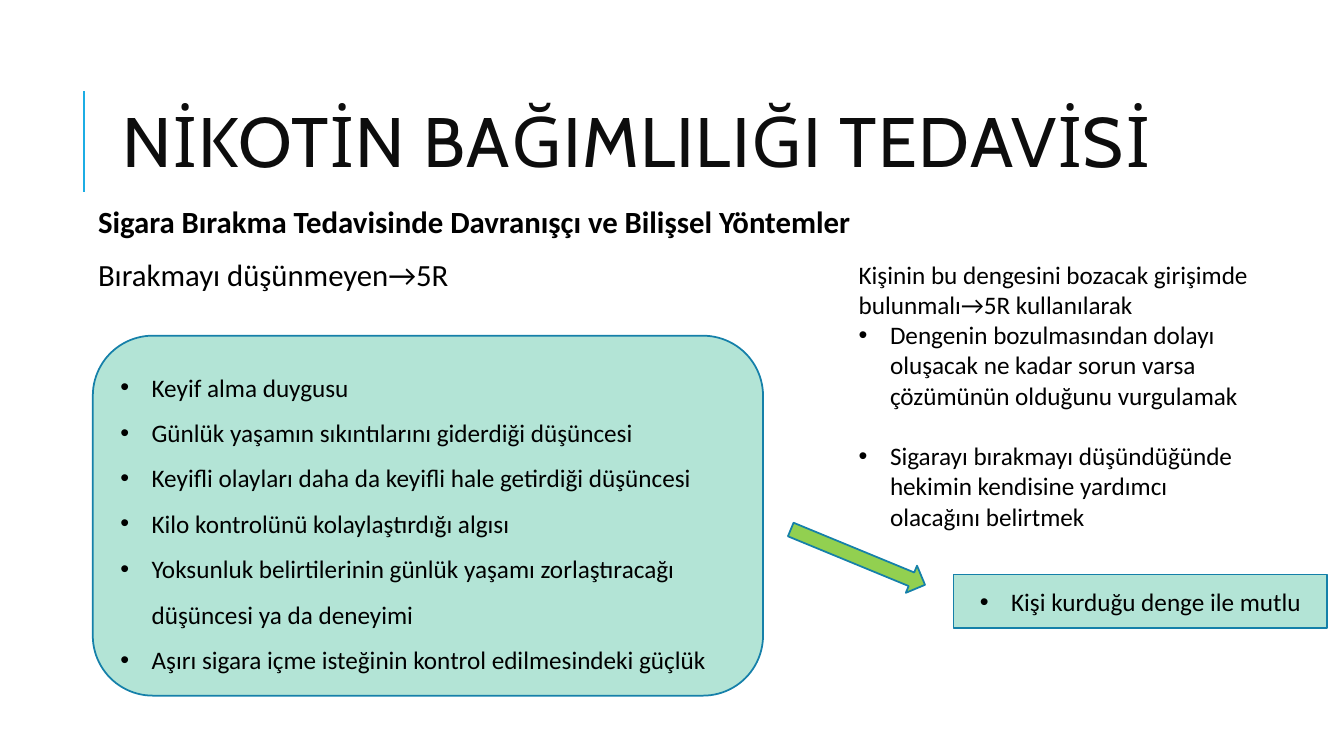
from lxml import etree
from pptx import Presentation
from pptx import util as u
from pptx.dml.color import RGBColor
from pptx.enum import shapes, text
from pptx.oxml.ns import qn

TITLE = "NİKOTİN BAĞIMLILIĞI TEDAVİSİ"
INTRO = [
    "Sigara Bırakma Tedavisinde Davranışçı ve Bilişsel Yöntemler",
    "Bırakmayı düşünmeyen→5R",
]
BELIEFS = [
    "Keyif alma duygusu",
    "Günlük yaşamın sıkıntılarını giderdiği düşüncesi",
    "Keyifli olayları daha da keyifli hale getirdiği düşüncesi",
    "Kilo kontrolünü kolaylaştırdığı algısı",
    "Yoksunluk belirtilerinin günlük yaşamı zorlaştıracağı düşüncesi ya da deneyimi",
    "Aşırı sigara içme isteğinin kontrol edilmesindeki güçlük",
]
BALANCE = ["Kişi kurduğu denge ile mutlu"]
ADVICE_LEAD = "Kişinin bu dengesini bozacak girişimde bulunmalı→5R kullanılarak"
ADVICE = [
    "Dengenin bozulmasından dolayı oluşacak ne kadar sorun varsa çözümünün olduğunu vurgulamak",
    "Sigarayı bırakmayı düşündüğünde hekimin kendisine yardımcı olacağını belirtmek",
]
MINT, GREEN, OUTLINE, ACCENT = "B3E4D6", "92D050", "1580A9", "1CADE4"
INK, TITLE_INK = "000000", "0D0D0D"
HANG = u.Cm(0.79)


def color(value):
    return RGBColor.from_string(value)


def place(item, left, top, width, height):
    item.left, item.top = u.Cm(left), u.Cm(top)
    item.width, item.height = u.Cm(width), u.Cm(height)


def set_font(para, size, name="Calibri", ink=INK, bold=False):
    para.font.size, para.font.name, para.font.bold = u.Pt(size), name, bold
    para.font.color.rgb = color(ink)


def set_bullet(para, char=None):
    """Hang the paragraph behind a bullet, or remove bullet and indent."""
    props = para._p.get_or_add_pPr()
    props.set("marL", str(HANG if char else 0))
    props.set("indent", str(-HANG if char else 0))
    if char:
        etree.SubElement(props, qn("a:buFont")).set("typeface", "Arial")
        etree.SubElement(props, qn("a:buChar")).set("char", char)
    else:
        etree.SubElement(props, qn("a:buNone"))


def write(frame, lines, bulleted=True):
    """Fill the frame with one paragraph per line and return the paragraphs."""
    frame.word_wrap = True
    frame.text = "\n".join(lines)
    for para in frame.paragraphs:
        para.alignment = text.PP_ALIGN.LEFT
        set_bullet(para, "•" if bulleted else None)
        set_font(para, 18)
    return frame.paragraphs


def add_panel(page, kind, fill, *bounds):
    panel = page.shapes.add_shape(kind, *map(u.Cm, bounds))
    panel.shadow.inherit = False
    panel.fill.solid()
    panel.fill.fore_color.rgb = color(fill)
    panel.line.color.rgb = color(OUTLINE)
    panel.line.width = u.Pt(1.25)
    panel.text_frame.vertical_anchor = text.MSO_ANCHOR.MIDDLE
    return panel


def main():
    deck = Presentation()
    deck.slide_width, deck.slide_height = u.Cm(33.87), u.Cm(19.05)
    page = deck.slides.add_slide(deck.slide_layouts[1])
    title, body = page.placeholders

    rule = page.shapes.add_connector(
        shapes.MSO_CONNECTOR.STRAIGHT, *map(u.Cm, (2.12, 4.83, 2.12, 2.29)))
    rule.line.color.rgb = color(ACCENT)
    rule.line.width = u.Pt(1.5)
    etree.SubElement(rule._element.spPr, qn("a:effectLst"))

    place(title, 2.84, 1.63, 27, 4.17)
    title.text_frame.text = TITLE
    title.text_frame.vertical_anchor = text.MSO_ANCHOR.MIDDLE
    heading = title.text_frame.paragraphs[0]
    heading.alignment = text.PP_ALIGN.LEFT
    heading.line_spacing = 0.8
    set_font(heading, 50, "Cabin", TITLE_INK)
    heading.runs[0].font._element.set("spc", "100")

    place(body, 2.34, 5.08, 31.34, 18.08 - 5.08)
    frame = body.text_frame
    frame.margin_left = frame.margin_right = u.Cm(0.13)
    frame.margin_top = frame.margin_bottom = u.Cm(0.13)
    intro = write(frame, INTRO, bulleted=False)
    for index, para in enumerate(intro):
        para.line_spacing = 0.9
        para.space_before = u.Pt(12 if index else 0)
        para.space_after = u.Pt(2)
        set_font(para, 22, bold=index == 0)

    kinds = shapes.MSO_SHAPE
    beliefs = add_panel(page, kinds.ROUNDED_RECTANGLE, MINT, 2.34, 8.46, 16.89, 9.07)
    for para in write(beliefs.text_frame, BELIEFS):
        para.line_spacing = 1.5

    arrow = add_panel(page, kinds.RIGHT_ARROW, GREEN, 19.79, 13.67, 3.66, 0.74)
    arrow.rotation = 22.4

    balance = add_panel(page, kinds.RECTANGLE, MINT, 24.03, 14.48, 9.42, 1.35)
    write(balance.text_frame, BALANCE)[0].alignment = text.PP_ALIGN.CENTER

    advice = page.shapes.add_textbox(*map(u.Cm, (21.39, 6.4, 10.52, 7.19)))
    paras = write(advice.text_frame, [ADVICE_LEAD] + ADVICE)
    lead = paras[0]._p.pPr
    for tag in ("a:buFont", "a:buChar"):
        lead.remove(lead.find(qn(tag)))
    lead.set("marL", "0")
    lead.set("indent", "0")
    paras[-1].space_before = u.Pt(21.6)

    deck.save("out.pptx")


if __name__ == "__main__":
    main()
